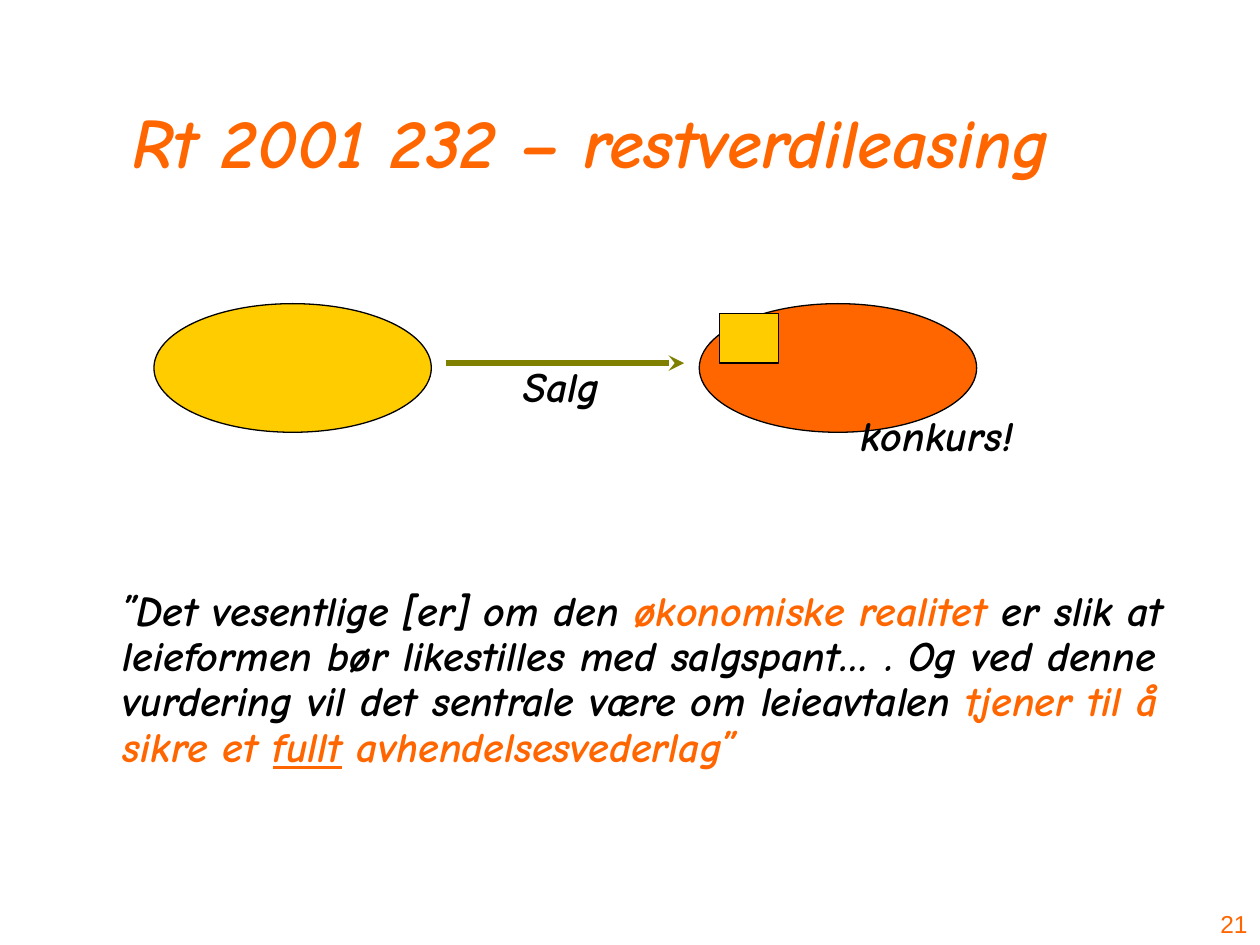
import pptx
import pptx.util
import pptx.dml.color
import pptx.enum.shapes
import pptx.enum.text
from lxml import etree

Pt = pptx.util.Pt
SHAPES = pptx.enum.shapes.MSO_SHAPE
ALIGN = pptx.enum.text.PP_ALIGN
ANCHOR = pptx.enum.text.MSO_ANCHOR
FIT = pptx.enum.text.MSO_AUTO_SIZE

ORANGE, YELLOW, OLIVE, BLACK = "FF6600", "FFCC00", "808000", "000000"
HAND_FONT = "Comic Neue"

TITLE = "Rt 2001 232 – restverdileasing"
QUOTE = [  # text, colour, underlined
    ("”Det vesentlige [er] om den ", BLACK, False),
    ("økonomiske realitet", ORANGE, False),
    (" er slik at leieformen bør likestilles med salgspant… . "
     "Og ved denne vurdering vil det sentrale være om leieavtalen ", BLACK, False),
    ("tjener til å sikre et ", ORANGE, False),
    ("fullt", ORANGE, True),
    (" avhendelsesvederlag”", ORANGE, False),
]
PARTY_TOP, PARTY_WIDTH, PARTY_HEIGHT = 173.5, 158.5, 73.5
SELLER_LEFT, BUYER_LEFT = 88, 399.6
ARROW_GAP, ARROW_Y = 8.6, 207.5
FIGURES = [  # preset, place, fill
    (SHAPES.OVAL, (BUYER_LEFT, PARTY_TOP, PARTY_WIDTH, PARTY_HEIGHT), ORANGE),
    (SHAPES.OVAL, (SELLER_LEFT, PARTY_TOP, PARTY_WIDTH, PARTY_HEIGHT), YELLOW),
    (SHAPES.RECTANGLE, (411, 179.25, 34, 28.25), YELLOW),
]
LABELS = [  # text, place, wraps
    ("Salg", (292, 202.5, 64, 36), False),
    ("konkurs!", (484.5, 230.5, 113, 36), True),
]


def colour(code):
    return pptx.dml.color.RGBColor.from_string(code)


def place(shape, left, top, width, height):
    shape.left, shape.top = Pt(left), Pt(top)
    shape.width, shape.height = Pt(width), Pt(height)


def add_span(para, text, size, code, font=HAND_FONT, slanted=True, underlined=False):
    """Add one run; slanted means bold italic."""
    span = para.add_run()
    span.text = text
    span.font.name, span.font.size = font, Pt(size)
    span.font.bold = span.font.italic = slanted
    span.font.underline = underlined
    span.font.color.rgb = colour(code)


def add_box(page, where, wraps=True):
    box = page.shapes.add_textbox(*map(Pt, where))
    box.text_frame.word_wrap = wraps
    return box.text_frame


def add_figure(page, preset, where, fill):
    shape = page.shapes.add_shape(preset, *map(Pt, where))
    shape.shadow.inherit = False
    shape.fill.solid()
    shape.fill.fore_color.rgb = colour(fill)
    shape.line.color.rgb = colour(BLACK)
    shape.line.width = Pt(0.75)


def add_arrow(page, start, end, y):
    arrow = page.shapes.add_connector(
        pptx.enum.shapes.MSO_CONNECTOR.STRAIGHT, Pt(start), Pt(y), Pt(end), Pt(y))
    arrow.line.color.rgb = colour(OLIVE)
    arrow.line.width = Pt(3)
    namespace = pptx.oxml.ns.qn
    line = arrow.line._get_or_add_ln()
    etree.SubElement(line, namespace("a:tailEnd"), type="stealth")
    etree.SubElement(arrow._element.spPr, namespace("a:effectLst"))


def fill_title(title):
    place(title, 31.5, 18, 612, 90)
    frame = title.text_frame
    frame.auto_size = FIT.NONE
    frame.vertical_anchor = ANCHOR.BOTTOM
    frame.paragraphs[0].alignment = ALIGN.CENTER
    add_span(frame.paragraphs[0], TITLE, 40, ORANGE)


def fill_quote(body):
    place(body, 63, 333.5, 616.5, 146)
    frame = body.text_frame
    frame.auto_size = FIT.NONE
    para = frame.paragraphs[0]
    properties = para._p.get_or_add_pPr()
    properties.set("marL", "0")
    properties.set("indent", "0")
    etree.SubElement(properties, pptx.oxml.ns.qn("a:buNone"))
    para.line_spacing = 0.9
    para.space_before = Pt(0)
    for text, code, underlined in QUOTE:
        add_span(para, text, 24, code, underlined=underlined)


def main():
    deck = pptx.Presentation()
    deck.slide_width, deck.slide_height = Pt(720), Pt(540)
    page = deck.slides.add_slide(deck.slide_layouts[1])
    fill_title(page.shapes.title)
    fill_quote(page.placeholders[1])

    for figure in FIGURES:
        add_figure(page, *figure)
    add_arrow(page, SELLER_LEFT + PARTY_WIDTH + ARROW_GAP, BUYER_LEFT - ARROW_GAP, ARROW_Y)
    for text, where, wraps in LABELS:
        add_span(add_box(page, where, wraps).paragraphs[0], text, 24, BLACK)

    number = add_box(page, (672, 504, 48, 36))
    number.vertical_anchor = ANCHOR.BOTTOM
    number.paragraphs[0].alignment = ALIGN.RIGHT
    add_span(number.paragraphs[0], "21", 14, ORANGE, font="Arial", slanted=False)
    deck.save("out.pptx")


if __name__ == "__main__":
    main()
